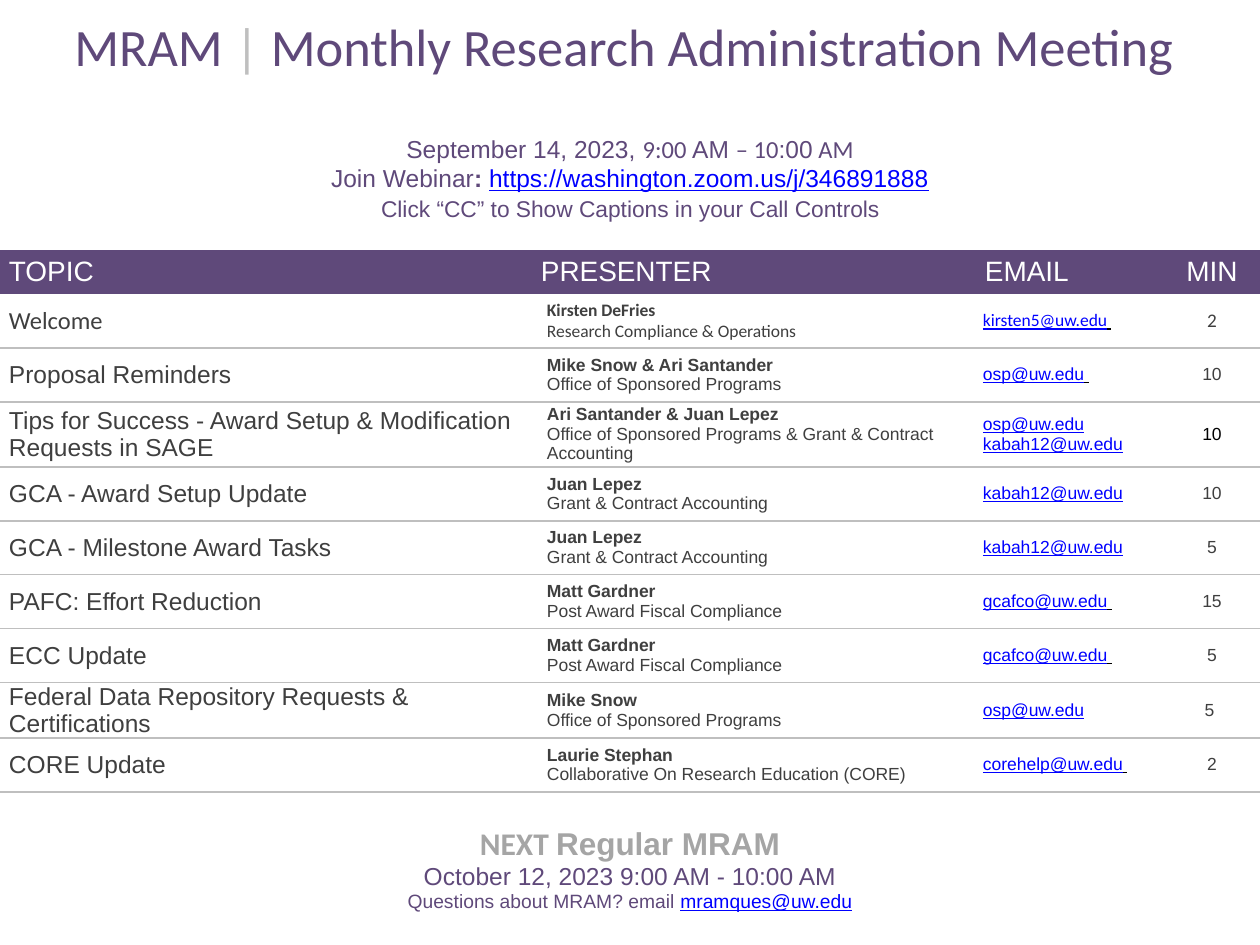
from lxml import etree
from pptx import Presentation
from pptx import util as u
from pptx.dml.color import RGBColor
from pptx.enum import text
from pptx.oxml import ns

COLORS = {
    "purple": "5F497A", "rule": "BFBFBF", "white": "FFFFFF", "ink": "3F3F3F",
    "link": "0000FF", "black": "000000", "gray": "A5A5A5",
}
PX = 914400 / 126
NO_STYLE = "{2D5ABB26-0587-4C30-8999-92F81FD0307C}"
COLUMNS = [532, 436, 196, 96]
TITLE_ROW, SESSION_ROW, HEADER_ROW, TOPIC_ROW, TALL_ROW = 81, 169, 44, 54, 65
SLIDE_HEIGHT = 945

TITLE = [("MRAM ", {}), ("|", {"color": "rule"}), (" Monthly Research Administration Meeting ", {})]
SESSION = [
    [("September 14, 2023, ", {}), ("9:00 ", {"font": "Calibri"}), ("AM ", {}),
     ("– 10", {"font": "Calibri"}), (":00", {}), (" AM", {"font": "Calibri"})],
    [("Join Webinar", {}), (": ", {"bold": True}),
     ("https://washington.zoom.us/j/346891888", {"color": "link", "underline": True})],
    [("Click “CC” to Show Captions in your Call Controls", {"size": 13})],
]
HEADERS = ["TOPIC", "PRESENTER", "EMAIL", "MIN"]
OSP, GCA, PAFC = "Office of Sponsored Programs", "Grant & Contract Accounting", "Post Award Fiscal Compliance"
AGENDA = [
    ("Welcome", "Kirsten DeFries", "Research Compliance & Operations", ["kirsten5@uw.edu "], "2"),
    ("Proposal Reminders", "Mike Snow & Ari Santander", OSP, ["osp@uw.edu "], "10"),
    ("Tips for Success - Award Setup & Modification Requests in SAGE", "Ari Santander & Juan Lepez",
     f"{OSP} & {GCA}", ["osp@uw.edu", "kabah12@uw.edu"], "10"),
    ("GCA - Award Setup Update", "Juan Lepez", GCA, ["kabah12@uw.edu"], "10"),
    ("GCA - Milestone Award Tasks", "Juan Lepez", GCA, ["kabah12@uw.edu"], "5"),
    ("PAFC: Effort Reduction", "Matt Gardner", PAFC, ["gcafco@uw.edu "], "15"),
    ("ECC Update", "Matt Gardner", PAFC, ["gcafco@uw.edu "], "5"),
    ("Federal Data Repository Requests & Certifications", "Mike Snow", OSP, ["osp@uw.edu"], "5 "),
    ("CORE Update", "Laurie Stephan", "Collaborative On Research Education (CORE)", ["corehelp@uw.edu "], "2"),
]
NEXT_MEETING = [
    [("NEXT ", {"size": 18, "font": "Calibri", "color": "gray", "bold": True}),
     ("Regular MRAM", {"size": 18, "color": "gray", "bold": True})],
    [("October 12, 2023 9:00 AM - 10:00 AM", {})],
    [("Questions about MRAM? email ", {"size": 11}),
     ("mramques@uw.edu", {"size": 11, "color": "link", "underline": True})],
]


def px(value):
    return u.Emu(round(value * PX))


def add_span(para, words, size=14, font="Arial", color="ink", bold=False, underline=False):
    span = para.add_run()
    span.text = words
    span.font.size = u.Pt(size)
    span.font.name = font
    span.font.bold = bold
    span.font.underline = underline
    span.font.color.rgb = RGBColor.from_string(COLORS[color])


def write(cell, paragraphs, fill="white", left=9, right=9, bottom=0, anchor="MIDDLE",
          align="LEFT", rule=False, **style):
    cell.margin_left, cell.margin_right = px(left), px(right)
    cell.margin_top, cell.margin_bottom = 0, px(bottom)
    cell.vertical_anchor = text.MSO_ANCHOR[anchor]
    cell.fill.solid()
    cell.fill.fore_color.rgb = RGBColor.from_string(COLORS[fill])
    if rule:
        line = etree.Element(ns.qn("a:lnB"), w="12700")
        paint = etree.SubElement(line, ns.qn("a:solidFill"))
        etree.SubElement(paint, ns.qn("a:srgbClr"), val=COLORS["rule"])
        cell._tc.get_or_add_tcPr().insert(0, line)
    for index, spans in enumerate(paragraphs):
        para = cell.text_frame.paragraphs[0] if index == 0 else cell.text_frame.add_paragraph()
        para.alignment = text.PP_ALIGN[align]
        for words, changes in spans:
            add_span(para, words, **{**style, **changes})


def email_spans(address):
    link = [(address.strip(), {})]
    return link + [(" ", {"color": "black"})] if address.endswith(" ") else link


def main():
    deck = Presentation()
    deck.slide_width, deck.slide_height = px(sum(COLUMNS)), px(SLIDE_HEIGHT)
    page = deck.slides.add_slide(deck.slide_layouts[6])

    topic_heights = [TALL_ROW if item[0].startswith("Tips") else TOPIC_ROW for item in AGENDA]
    heights = [TITLE_ROW, SESSION_ROW, HEADER_ROW, *topic_heights]
    heights.append(SLIDE_HEIGHT - sum(heights))
    table = page.shapes.add_table(len(heights), len(COLUMNS), 0, 0,
                                  deck.slide_width, deck.slide_height).table
    table.first_row = table.horz_banding = False
    table._tbl.tblPr.find(ns.qn("a:tableStyleId")).text = NO_STYLE
    for column, width in zip(table.columns, COLUMNS):
        column.width = px(width)
    for row, height in zip(table.rows, heights):
        row.height = px(height)

    last = len(heights) - 1
    for index in (0, 1, last):
        table.cell(index, 0).merge(table.cell(index, len(COLUMNS) - 1))
    write(table.cell(0, 0), [TITLE], anchor="BOTTOM", align="CENTER",
          size=30, font="Calibri", color="purple")
    write(table.cell(1, 0), SESSION, anchor="BOTTOM", align="CENTER", bottom=28, color="purple")
    table.cell(1, 0).text_frame.paragraphs[-1].line_spacing = 1.15
    write(table.cell(last, 0), NEXT_MEETING, align="CENTER", color="purple")

    for column, label in enumerate(HEADERS):
        write(table.cell(2, column), [[(label, {})]], fill="purple", size=16, color="white",
              left=17 if label == "EMAIL" else 9, align="CENTER" if label == "MIN" else "LEFT")

    for index, (topic, presenter, office, emails, minutes) in enumerate(AGENDA):
        topic_cell, presenter_cell, email_cell, minutes_cell = table.rows[index + 3].cells
        base = {"rule": True, "font": "Calibri" if index == 0 else "Arial"}
        write(topic_cell, [[(topic, {})]], **base)
        write(presenter_cell, [[(presenter, {"bold": True})], [(office, {})]],
              left=15, right=15, size=10, **base)
        write(email_cell, [email_spans(address) for address in emails],
              left=15, right=15, size=10, color="link", underline=True, **base)
        write(minutes_cell, [[(minutes, {})]], align="CENTER", size=11 if index == 0 else 10,
              color="black" if len(emails) > 1 else "ink", **base)

    deck.save("out.pptx")


if __name__ == "__main__":
    main()
